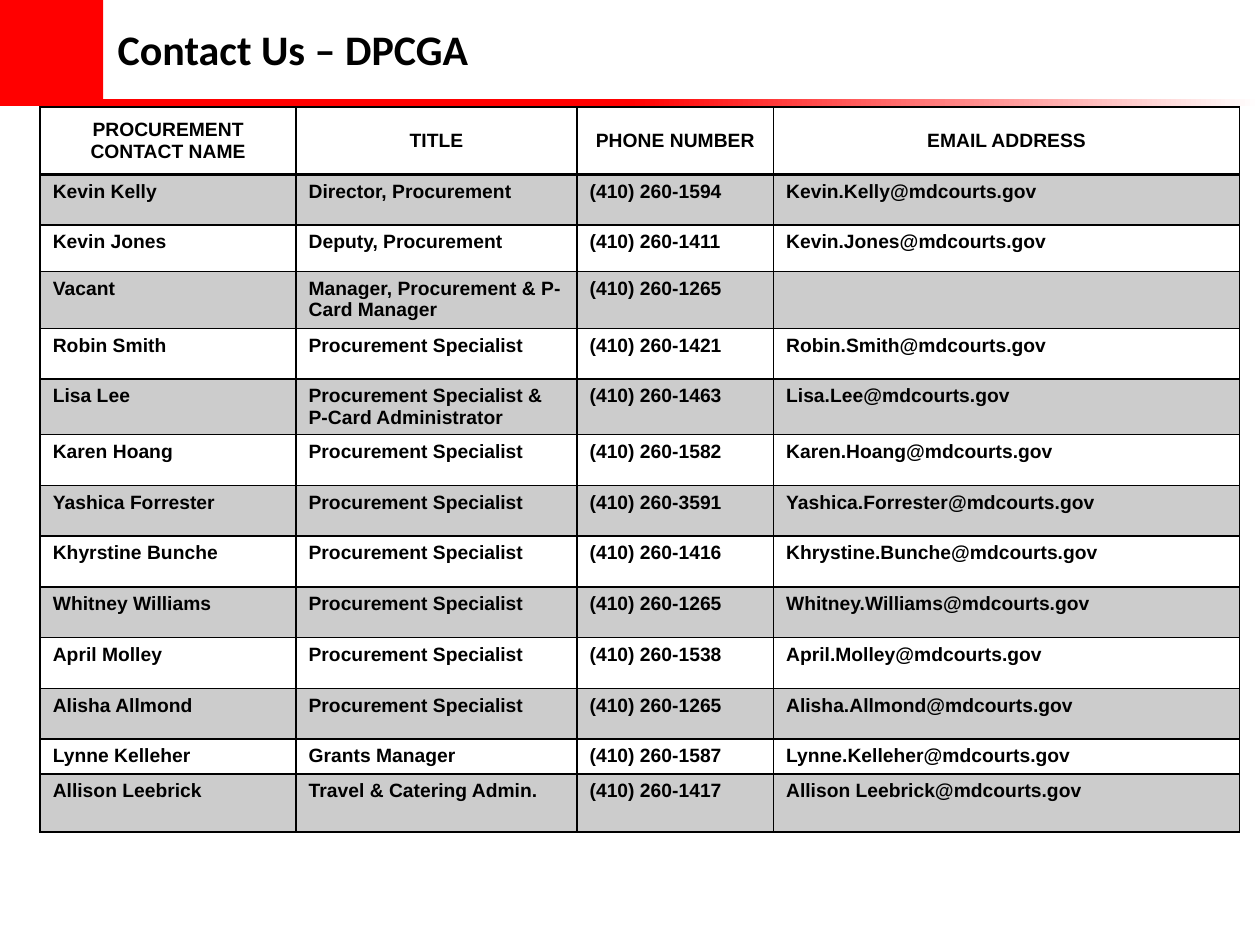
from lxml import etree
from pptx import Presentation
from pptx.dml.color import RGBColor
from pptx.enum.shapes import MSO_SHAPE
from pptx.enum.text import MSO_ANCHOR, PP_ALIGN
from pptx.oxml import parse_xml
from pptx.oxml.ns import nsdecls, qn
from pptx.util import Pt

RECT = MSO_SHAPE.RECTANGLE
LEFT, CENTER = PP_ALIGN.LEFT, PP_ALIGN.CENTER
TOP, MIDDLE = MSO_ANCHOR.TOP, MSO_ANCHOR.MIDDLE

RED = RGBColor(0xFF, 0x00, 0x00)
WHITE = RGBColor(0xFF, 0xFF, 0xFF)
BLACK = RGBColor(0x00, 0x00, 0x00)
BAND_ALPHA = 20

HEADER = ("PROCUREMENT CONTACT NAME", "TITLE", "PHONE NUMBER", "EMAIL ADDRESS")
SPECIALIST = "Procurement Specialist"
# Name, title, last four digits of the phone number, mailbox, row height
CONTACTS = [
    ("Kevin Kelly", "Director, Procurement", "1594", "Kevin.Kelly", 29),
    ("Kevin Jones", "Deputy, Procurement", "1411", "Kevin.Jones", 26.5),
    ("Vacant", "Manager, Procurement & P-Card Manager", "1265", "", 32.5),
    ("Robin Smith", SPECIALIST, "1421", "Robin.Smith", 29),
    ("Lisa Lee", "Procurement Specialist & P-Card Administrator", "1463", "Lisa.Lee", 31.5),
    ("Karen Hoang", SPECIALIST, "1582", "Karen.Hoang", 29),
    ("Yashica Forrester", SPECIALIST, "3591", "Yashica.Forrester", 29),
    ("Khyrstine Bunche", SPECIALIST, "1416", "Khrystine.Bunche", 29),
    ("Whitney Williams", SPECIALIST, "1265", "Whitney.Williams", 29),
    ("April Molley", SPECIALIST, "1538", "April.Molley", 29),
    ("Alisha Allmond", SPECIALIST, "1265", "Alisha.Allmond", 29),
    ("Lynne Kelleher", "Grants Manager", "1587", "Lynne.Kelleher", 20),
    ("Allison Leebrick", "Travel & Catering Admin.", "1417", "Allison Leebrick", 33),
]
HEADER_HEIGHT = 38.5
COLUMN_WIDTHS = (146.2, 160.6, 112.3, 266.4)


def format_text(tf, font, size, align):
    for p in tf.paragraphs:
        p.alignment = align
        p.font.name = font
        p.font.size = Pt(size)
        p.font.bold = True
        p.font.color.rgb = BLACK


def add_bar(slide, left, top, width, height):
    sp = slide.shapes.add_shape(RECT, Pt(left), Pt(top), Pt(width), Pt(height))
    sp.shadow.inherit = False
    sp.line.fill.background()
    return sp


def add_banner(slide, left, top, width, height):
    """Red block with the title beside it and a fading rule below."""
    block, rule = 59, 4
    body = height - rule
    fill = add_bar(slide, left, top + body, width, rule).fill
    fill.gradient()
    fill.gradient_angle = 0
    for stop, position, color in zip(fill.gradient_stops, (0.5, 1), (RED, WHITE)):
        stop.position = position
        stop.color.rgb = color

    fill = add_bar(slide, left, top, block, body).fill
    fill.solid()
    fill.fore_color.rgb = RED

    title = slide.shapes.title
    title.left, title.top = Pt(left + block + 1), Pt(top + 2)
    title.width, title.height = Pt(522), Pt(52)
    tf = title.text_frame
    tf.text = "Contact Us – DPCGA"
    tf.vertical_anchor = MIDDLE
    format_text(tf, "Calibri", 24, LEFT)


def set_borders(cell, **widths):
    """Black borders; the keywords are the sides L, R, T and B."""
    tcPr = cell._tc.get_or_add_tcPr()
    for side, width in widths.items():
        tcPr.append(parse_xml(
            f'<a:ln{side} {nsdecls("a")} w="{Pt(width)}"><a:solidFill>'
            f'<a:srgbClr val="{BLACK}"/></a:solidFill></a:ln{side}>'))


def fill_band(cell):
    cell.fill.solid()
    cell.fill.fore_color.rgb = BLACK
    color = cell._tc.tcPr.find(qn("a:solidFill")).find(qn("a:srgbClr"))
    etree.SubElement(color, qn("a:alpha")).set("val", str(BAND_ALPHA * 1000))


def add_contacts(slide, left, top):
    rows = [HEADER] + [
        (name, title, f"(410) 260-{digits}", mailbox and f"{mailbox}@mdcourts.gov")
        for name, title, digits, mailbox, _ in CONTACTS]
    heights = [HEADER_HEIGHT] + [contact[-1] for contact in CONTACTS]
    table = slide.shapes.add_table(
        len(rows), len(HEADER), Pt(left), Pt(top),
        Pt(sum(COLUMN_WIDTHS)), Pt(sum(heights))).table
    table.first_row = table.horz_banding = False
    for column, width in zip(table.columns, COLUMN_WIDTHS):
        column.width = Pt(width)

    for i, (values, height) in enumerate(zip(rows, heights)):
        table.rows[i].height = Pt(height)
        for cell, value in zip(table.rows[i].cells, values):
            cell.text = value
            cell.vertical_anchor = TOP if i else MIDDLE
            format_text(cell.text_frame, "Arial", 11, LEFT if i else CENTER)
            set_borders(cell, L=1, R=1, T=2 if i == 1 else 1, B=1 if i else 2)
            if i % 2:
                fill_band(cell)
            else:
                cell.fill.background()


def main():
    prs = Presentation()
    prs.slide_width, prs.slide_height = Pt(720), Pt(540)
    slide = prs.slides.add_slide(prs.slide_layouts[5])
    add_banner(slide, 0, 0, 720, 60.5)
    add_contacts(slide, 23, 61.2)
    prs.save("out.pptx")


if __name__ == "__main__":
    main()
